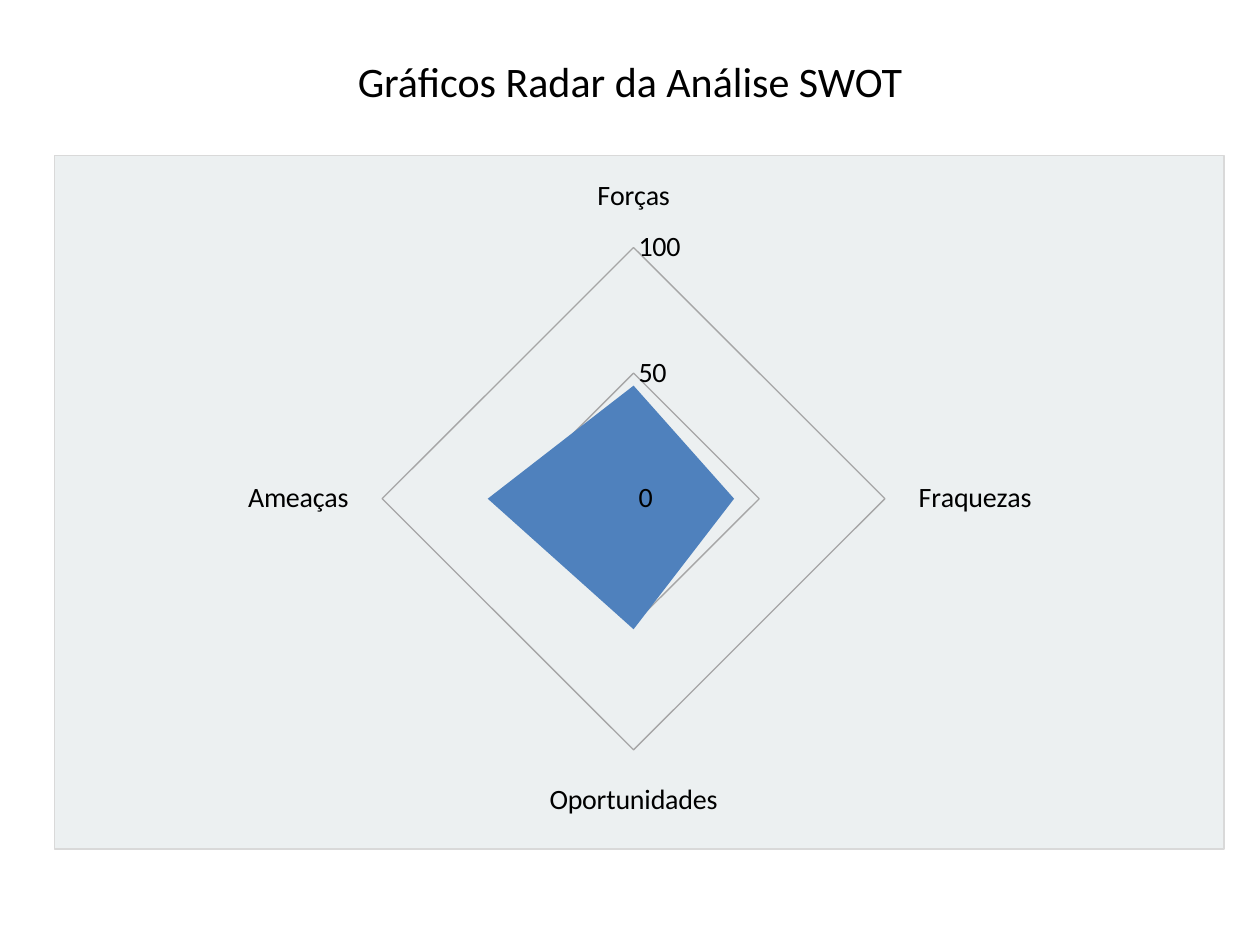
import dataclasses

import lxml.etree
import pptx
import pptx.chart.chart
import pptx.chart.data
import pptx.dml.color
import pptx.dml.line
import pptx.enum.chart
import pptx.enum.text
import pptx.oxml.ns
import pptx.slide
import pptx.util

BLACK = pptx.dml.color.RGBColor(0x00, 0x00, 0x00)
PANEL = pptx.dml.color.RGBColor(0xEC, 0xF0, 0xF1)
BORDER = pptx.dml.color.RGBColor(0xD9, 0xD9, 0xD9)
GRID = pptx.dml.color.RGBColor(0xA6, 0xA6, 0xA6)
BLUE = pptx.dml.color.RGBColor(0x4F, 0x81, 0xBD)
FONT = "Calibri"
HAIRLINE = pptx.util.Pt(0.75)
SLIDE_WIDTH = pptx.util.Inches(10)
SLIDE_HEIGHT = pptx.util.Inches(7.5)


@dataclasses.dataclass(frozen=True)
class Area:
    left: float
    top: float
    width: float
    height: float

    def on_slide(self) -> tuple[int, int, int, int]:
        return (
            int(self.left * SLIDE_WIDTH),
            int(self.top * SLIDE_HEIGHT),
            int(self.width * SLIDE_WIDTH),
            int(self.height * SLIDE_HEIGHT),
        )


@dataclasses.dataclass(frozen=True)
class Aspect:
    name: str
    score: int


TITLE_AREA = Area(0, 0.05, 1, 0.07)
RADAR_AREA = Area(0.043, 0.164, 0.929, 0.735)
PLOT_AREA = Area(0.28, 0.13, 0.43, 0.73)
ASPECTS = [
    Aspect("Forças", 45),
    Aspect("Fraquezas", 40),
    Aspect("Oportunidades", 52),
    Aspect("Ameaças", 58),
]


def style_line(line: pptx.dml.line.LineFormat, color: pptx.dml.color.RGBColor) -> None:
    line.color.rgb = color
    line.width = HAIRLINE


def add_title(slide: pptx.slide.Slide, text: str) -> None:
    title = slide.shapes.title
    title.left, title.top, title.width, title.height = TITLE_AREA.on_slide()
    frame = title.text_frame
    frame.text = text
    frame.word_wrap = True
    frame.auto_size = pptx.enum.text.MSO_AUTO_SIZE.SHAPE_TO_FIT_TEXT
    frame.vertical_anchor = pptx.enum.text.MSO_ANCHOR.MIDDLE
    heading = frame.paragraphs[0]
    heading.alignment = pptx.enum.text.PP_ALIGN.CENTER
    heading.font.name = FONT
    heading.font.size = pptx.util.Pt(24)
    heading.font.color.rgb = BLACK


def fill_panel(chart: pptx.chart.chart.Chart) -> None:
    panel = lxml.etree.fromstring(
        f'<c:spPr {pptx.oxml.ns.nsdecls("c", "a")}>'
        f'<a:solidFill><a:srgbClr val="{PANEL}"/></a:solidFill>'
        f'<a:ln w="{int(HAIRLINE)}"><a:solidFill><a:srgbClr val="{BORDER}"/>'
        "</a:solidFill></a:ln></c:spPr>"
    )
    chart.element.find(pptx.oxml.ns.qn("c:chart")).addnext(panel)


def place_plot(chart: pptx.chart.chart.Chart, area: Area) -> None:
    plot_area = chart.element.find(".//" + pptx.oxml.ns.qn("c:plotArea"))
    for automatic in plot_area.findall(pptx.oxml.ns.qn("c:layout")):
        plot_area.remove(automatic)
    settings = {
        "layoutTarget": "inner",
        "xMode": "edge",
        "yMode": "edge",
        "x": area.left,
        "y": area.top,
        "w": area.width,
        "h": area.height,
    }
    entries = "".join(f'<c:{key} val="{value}"/>' for key, value in settings.items())
    layout = lxml.etree.fromstring(
        f'<c:layout {pptx.oxml.ns.nsdecls("c")}>'
        f"<c:manualLayout>{entries}</c:manualLayout></c:layout>"
    )
    plot_area.insert(0, layout)


def add_radar(slide: pptx.slide.Slide, aspects: list[Aspect]) -> None:
    scores = pptx.chart.data.CategoryChartData()
    scores.categories = [aspect.name for aspect in aspects]
    scores.add_series("Series 1", [aspect.score for aspect in aspects])
    chart = slide.shapes.add_chart(
        pptx.enum.chart.XL_CHART_TYPE.RADAR_FILLED, *RADAR_AREA.on_slide(), scores
    ).chart
    chart.has_title = False
    chart.has_legend = False
    chart.font.name = FONT
    chart.font.size = pptx.util.Pt(16)
    chart.font.color.rgb = BLACK

    for axis in (chart.category_axis, chart.value_axis):
        axis.major_tick_mark = pptx.enum.chart.XL_TICK_MARK.NONE
        axis.minor_tick_mark = pptx.enum.chart.XL_TICK_MARK.NONE
    chart.category_axis.has_major_gridlines = False
    style_line(chart.category_axis.format.line, BORDER)
    scale = chart.value_axis
    scale.minimum_scale, scale.maximum_scale, scale.major_unit = 0, 100, 50
    scale.tick_labels.number_format = "0"
    scale.tick_labels.number_format_is_linked = False
    scale.format.line.fill.background()
    scale.has_major_gridlines = True
    style_line(scale.major_gridlines.format.line, GRID)

    plot = chart.plots[0]
    plot.vary_by_categories = False
    profile = plot.series[0].format
    profile.fill.solid()
    profile.fill.fore_color.rgb = BLUE
    profile.line.fill.background()
    fill_panel(chart)
    place_plot(chart, PLOT_AREA)


def main() -> None:
    deck = pptx.Presentation()
    deck.slide_width, deck.slide_height = SLIDE_WIDTH, SLIDE_HEIGHT
    slide = deck.slides.add_slide(deck.slide_layouts[5])
    add_radar(slide, ASPECTS)
    add_title(slide, "Gráficos Radar da Análise SWOT")
    deck.save("out.pptx")


if __name__ == "__main__":
    main()
